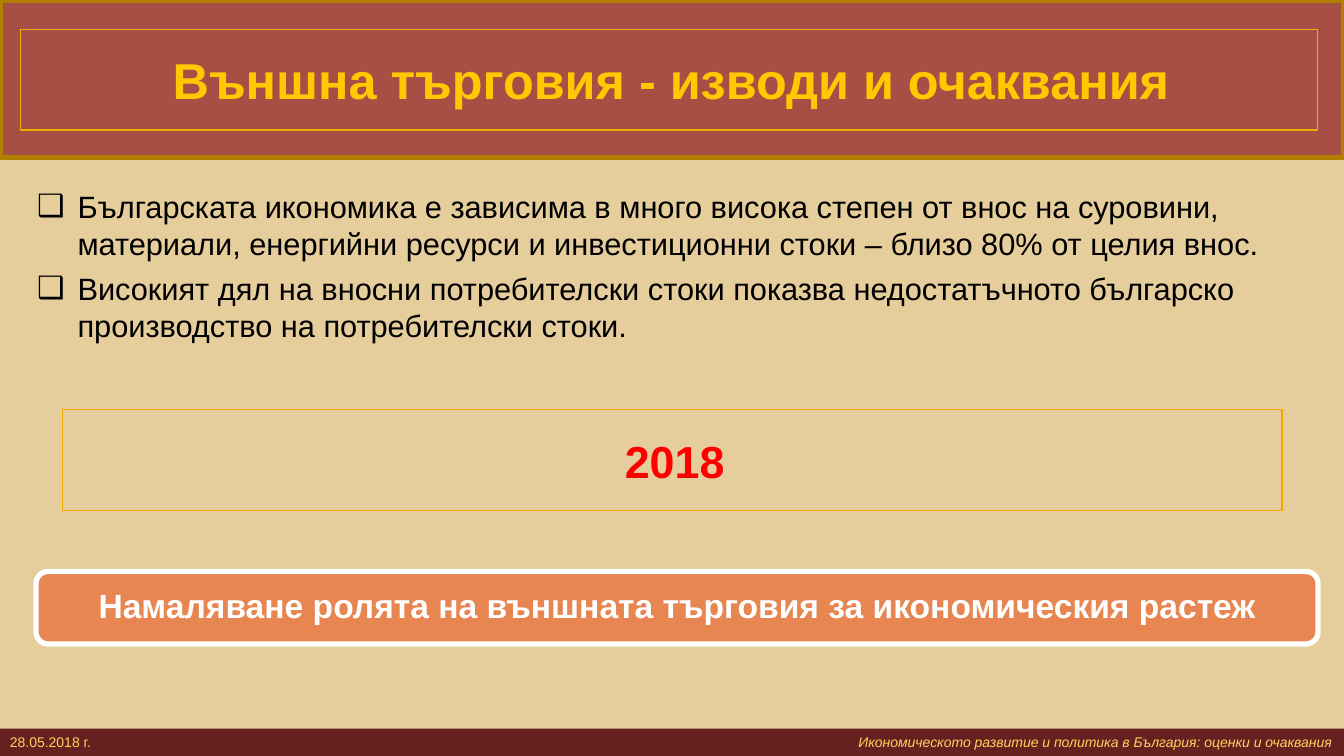
from lxml.etree import SubElement
from pptx import Presentation
from pptx.dml.color import RGBColor
from pptx.enum.shapes import MSO_SHAPE as Shape
from pptx.enum.text import MSO_ANCHOR as Anchor, MSO_AUTO_SIZE as AutoSize, PP_ALIGN as Align
from pptx.oxml.ns import qn
from pptx.util import Pt

COLORS = {
    "sand": "E5CD9C",
    "brick": "A84F45",
    "bronze": "B28000",
    "amber": "F0AD00",
    "gold": "FFC800",
    "maroon": "672020",
    "pale_gold": "FFD25D",
    "orange": "E88651",
    "red": "FF0000",
    "black": "000000",
    "white": "FFFFFF",
}
SLIDE_W, SLIDE_H = 960, 540
HEADER_H, FOOTER_H = 112.3, 19.6
INDENT = 28.8

CONCLUSIONS = [
    "Българската икономика е зависима в много висока степен от внос на суровини, "
    "материали, енергийни ресурси и инвестиционни стоки – близо 80% от целия внос.",
    "Високият дял на вносни потребителски стоки показва недостатъчното българско "
    "производство на потребителски стоки.",
]


def color(name):
    return RGBColor.from_string(COLORS[name])


def place(shape, left, top, width, height):
    shape.left, shape.top = Pt(left), Pt(top)
    shape.width, shape.height = Pt(width), Pt(height)


def style_box(shape, fill=None, line=None, weight=0.75):
    if fill:
        shape.fill.solid()
        shape.fill.fore_color.rgb = color(fill)
    else:
        shape.fill.background()
    if line:
        shape.line.color.rgb = color(line)
        shape.line.width = Pt(weight)
    else:
        shape.line.fill.background()


def add_box(slide, kind, bounds, **style):
    box = slide.shapes.add_shape(kind, *map(Pt, bounds))
    box.shadow.inherit = False
    style_box(box, **style)
    return box


def set_frame(shape, anchor, margins):
    frame = shape.text_frame
    frame.word_wrap = True
    frame.auto_size = AutoSize.NONE
    frame.vertical_anchor = anchor
    (frame.margin_left, frame.margin_top,
     frame.margin_right, frame.margin_bottom) = map(Pt, margins)
    return frame


def add_run(paragraph, text, size, ink, bold=False, italic=False):
    run = paragraph.add_run()
    run.text = text
    font = run.font
    font.name, font.size, font.bold, font.italic = "Arial", Pt(size), bold, italic
    font.color.rgb = color(ink)


def write_centered(shape, text, size, ink, margins=(7.2, 3.6, 3.6, 3.6)):
    paragraph = set_frame(shape, Anchor.MIDDLE, margins).paragraphs[0]
    paragraph.alignment = Align.CENTER
    add_run(paragraph, text, size, ink, bold=True)
    return paragraph


def write_list(shape, items, size, ink):
    frame = set_frame(shape, Anchor.TOP, (7.2, 3.6, 7.2, 3.6))
    for number, item in enumerate(items):
        paragraph = frame.add_paragraph() if number else frame.paragraphs[0]
        paragraph.alignment = Align.LEFT
        paragraph.space_before = Pt(6)
        props = paragraph._p.get_or_add_pPr()
        props.set("marL", str(Pt(INDENT)))
        props.set("indent", str(-Pt(INDENT)))
        SubElement(props, qn("a:buFont"), typeface="Arial")
        SubElement(props, qn("a:buChar"), char="❑")
        add_run(paragraph, item, size, ink)


def write_footer(shape, date, topic):
    paragraph = set_frame(shape, Anchor.MIDDLE, (7.2, 0, 7.2, 0)).paragraphs[0]
    paragraph.alignment = Align.LEFT
    # A right tab sets the topic against the far edge
    tabs = SubElement(paragraph._p.get_or_add_pPr(), qn("a:tabLst"))
    SubElement(tabs, qn("a:tab"), pos=str(Pt(944)), algn="r")
    add_run(paragraph, date + "\t", 10, "pale_gold")
    add_run(paragraph, topic, 10, "pale_gold", italic=True)


def main():
    deck = Presentation()
    deck.slide_width, deck.slide_height = Pt(SLIDE_W), Pt(SLIDE_H)
    slide = deck.slides.add_slide(deck.slide_layouts[1])
    slide.background.fill.solid()
    slide.background.fill.fore_color.rgb = color("sand")

    # Header band, sent behind the title
    header = add_box(slide, Shape.RECTANGLE, (0, 0, SLIDE_W, HEADER_H),
                     fill="brick", line="bronze", weight=3.78)
    slide.shapes._spTree.insert(2, header._element)

    # Title
    title = slide.shapes.title
    place(title, 14.4, 20.9, 926.6, 72)
    style_box(title, line="amber")
    write_centered(title, "Външна търговия - изводи и очаквания", 36, "gold")

    # Footer band
    footer = add_box(slide, Shape.RECTANGLE,
                     (0, SLIDE_H - FOOTER_H, SLIDE_W, FOOTER_H), fill="maroon")
    write_footer(footer, "28.05.2018 г.",
                 "Икономическото развитие и политика в България: оценки и очаквания")

    # Conclusions
    conclusions = slide.placeholders[1]
    place(conclusions, 19.4, 130.3, 906.5, 120.2)
    write_list(conclusions, CONCLUSIONS, 22, "black")

    # Outlook for the year
    year = add_box(slide, Shape.RECTANGLE, (44.6, 292.7, 871.2, 72), line="amber")
    write_centered(year, "2018", 32, "red")

    outlook = add_box(slide, Shape.ROUNDED_RECTANGLE, (25.7, 408.2, 915.8, 51.8),
                      fill="orange", line="white", weight=3.78)
    message = write_centered(
        outlook, "Намаляване ролята на външната търговия за икономическия растеж",
        24, "white", margins=(7.2, 7.2, 7.2, 7.2))
    message.line_spacing = 0.9

    deck.save("out.pptx")


if __name__ == "__main__":
    main()
